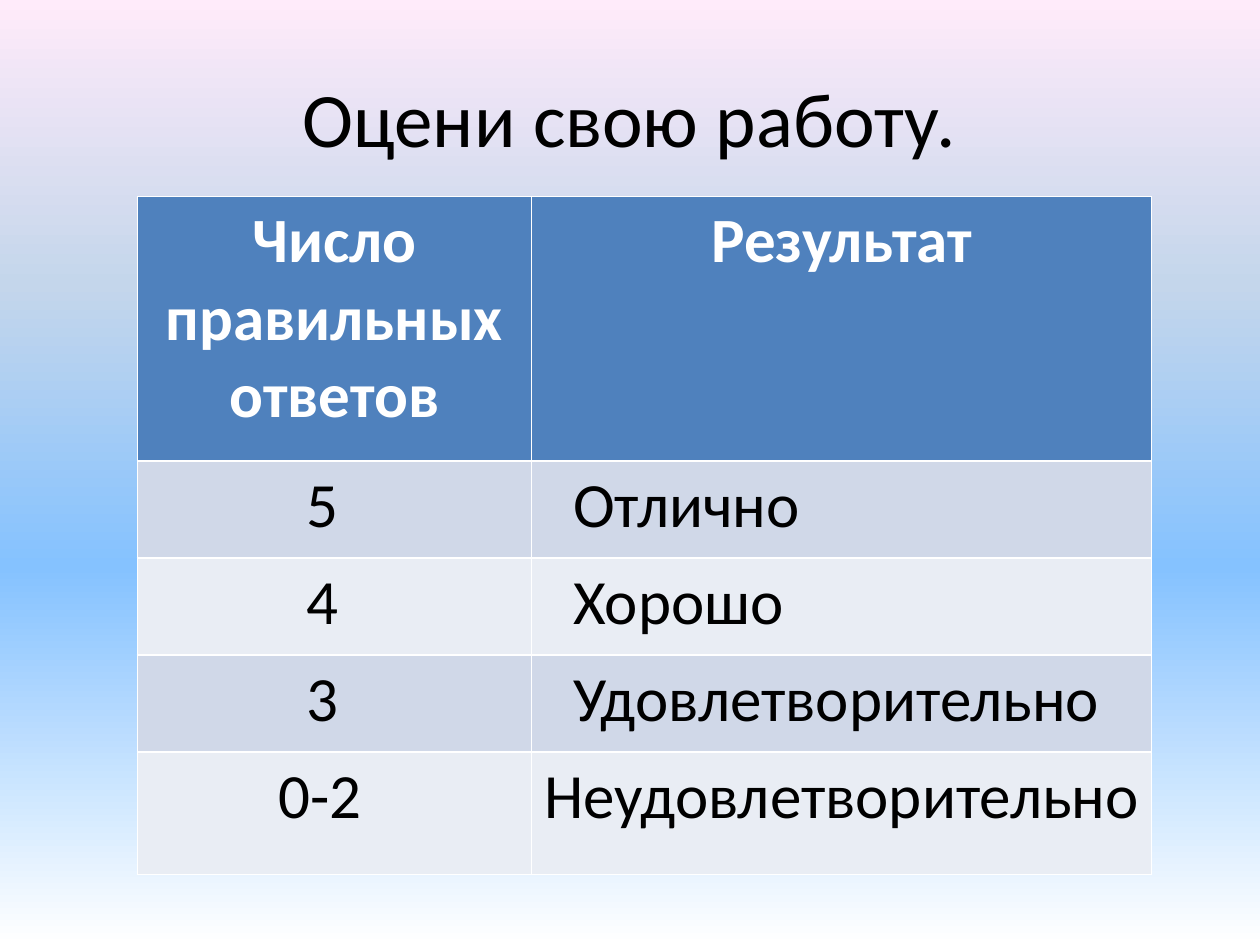
import pptx
import pptx.dml.color
import pptx.enum.text
import pptx.oxml
import pptx.oxml.ns
import pptx.util
from pptx.util import Inches

COLORS = {
    "text": "000000",
    "light": "FFFFFF",
    "head": "4F81BD",
    "odd": "D0D8E8",
    "even": "E9EDF4",
}
SKY = [(0, "FFFFFF"), (40, "85C2FF"), (70, "C4D6EB"), (100, "FFEBFA")]
ALIGN = pptx.enum.text.PP_ALIGN
HEADS = ["Число правильных ответов", "Результат"]
# Each grade: count, its left margin, result, its left margin
GRADES = [
    ("5", 1.34, "Отлично", 0.33),
    ("4", 1.34, "Хорошо", 0.33),
    ("3", 1.34, "Удовлетворительно", 0.33),
    ("0-2", 1.12, "Неудовлетворительно", 0.1),
]
WIDTHS = [3.13, 4.92]
HEIGHTS = [2.1, 0.77, 0.77, 0.77, 0.97]


def color(name):
    return pptx.dml.color.RGBColor.from_string(COLORS[name])


def style(par, size, tone, align, bold=False):
    par.alignment = align
    par.font.name = "Calibri"
    par.font.size = pptx.util.Pt(size)
    par.font.bold = bold
    par.font.color.rgb = color(tone)


def paint_sky(slide):
    """Fill the background with a gradient that rises from the bottom."""
    fill = slide.background.fill
    fill.gradient()
    grad = slide.background._cSld.find(".//" + pptx.oxml.ns.qn("a:gradFill"))
    stops = "".join(
        f'<a:gs pos="{pos * 1000}"><a:srgbClr val="{tone}"/></a:gs>'
        for pos, tone in SKY
    )
    space = pptx.oxml.ns.nsdecls("a")
    new = pptx.oxml.parse_xml(
        f'<a:gradFill {space} rotWithShape="1"><a:gsLst>{stops}</a:gsLst>'
        f'<a:lin ang="{270 * 60000}" scaled="0"/></a:gradFill>'
    )
    grad.getparent().replace(grad, new)


def set_title(slide, text):
    title = slide.shapes.title
    title.left, title.top = Inches(0.5), Inches(0.3)
    title.width, title.height = Inches(9), Inches(1.25)
    frame = title.text_frame
    frame.text = text
    frame.vertical_anchor = pptx.enum.text.MSO_ANCHOR.MIDDLE
    style(frame.paragraphs[0], 44, "text", ALIGN.CENTER)


def fill_cell(cell, text, back, tone, align, bold=False):
    cell.text = text
    cell.fill.solid()
    cell.fill.fore_color.rgb = color(back)
    style(cell.text_frame.paragraphs[0], 36, tone, align, bold)


def add_grades(slide):
    table = slide.shapes.add_table(
        len(HEIGHTS), len(WIDTHS), Inches(1.09), Inches(1.56),
        Inches(sum(WIDTHS)), Inches(sum(HEIGHTS)),
    ).table
    for col, width in zip(table.columns, WIDTHS):
        col.width = Inches(width)
    for row, height in zip(table.rows, HEIGHTS):
        row.height = Inches(height)
    for col, text in enumerate(HEADS):
        fill_cell(table.cell(0, col), text, "head", "light", ALIGN.CENTER, True)
    for row, (count, inset, result, gap) in enumerate(GRADES, 1):
        back = "odd" if row % 2 else "even"
        for col, (text, left) in enumerate([(count, inset), (result, gap)]):
            cell = table.cell(row, col)
            fill_cell(cell, text, back, "text", ALIGN.LEFT)
            cell.margin_left = Inches(left)
            cell.margin_right = Inches(0.05)


def main():
    deck = pptx.Presentation()
    deck.slide_width, deck.slide_height = Inches(10), Inches(7.5)
    slide = deck.slides.add_slide(deck.slide_layouts[5])
    paint_sky(slide)
    set_title(slide, "Оцени свою работу.")
    add_grades(slide)
    deck.save("out.pptx")


if __name__ == "__main__":
    main()
